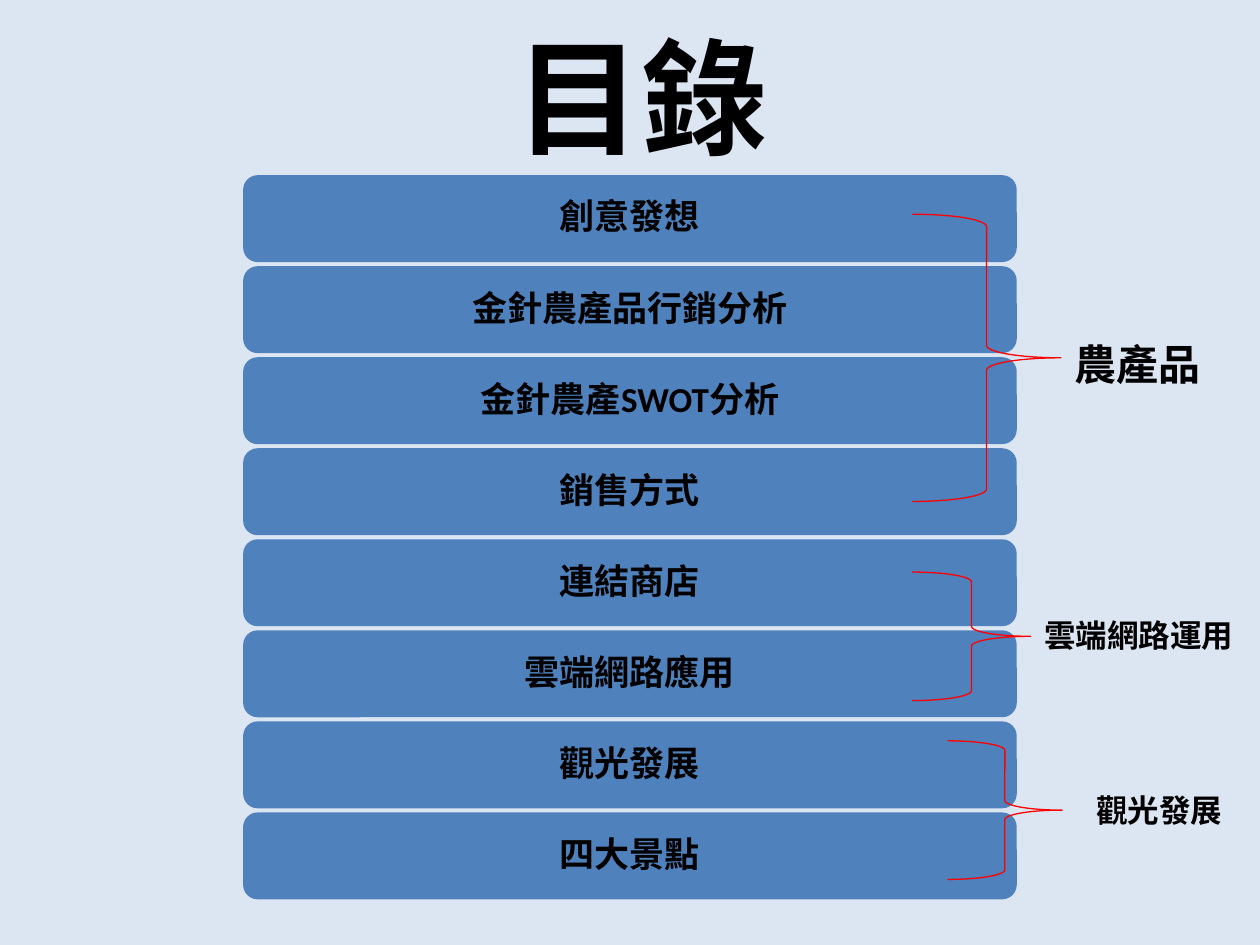
from pptx import Presentation
from pptx.dml.color import RGBColor as Rgb
from pptx.enum.shapes import MSO_SHAPE as Shape
from pptx.enum.text import MSO_ANCHOR as Anchor, PP_ALIGN as Align
from pptx.util import Inches, Pt

COLORS = {"back": "DCE6F2", "bar": "4F81BD", "brace": "FF0000", "text": "000000"}
WIDE, HIGH = 10, 7.5
LEFT, TOP, SPAN, TALL = 1.93, 1.39, 6.14, 0.69
STEP = 0.7225

TOPICS = ["創意發想", "金針農產品行銷分析", "金針農產SWOT分析", "銷售方式",
          "連結商店", "雲端網路應用", "觀光發展", "四大景點"]
GROUPS = [
    ((7.24, 1.7, 1.18, 2.28), "農產品", (8.43, 2.64, 1.21, 0.5), 24),
    ((7.24, 4.54, 0.94, 1.02), "雲端網路運用", (8.19, 4.84, 1.72, 0.4), 18),
    ((7.52, 5.88, 0.91, 1.1), "觀光發展", (8.6, 6.23, 1.21, 0.4), 18),
]


def color(name):
    return Rgb.from_string(COLORS[name])


def box(area):
    return [Inches(size) for size in area]


def write(shape, text, size, align=Align.LEFT, face="Calibri"):
    frame = shape.text_frame
    frame.text = text
    para = frame.paragraphs[0]
    para.alignment = align
    for run in para.runs:
        font = run.font
        font.name, font.size, font.bold = face, Pt(size), True
        font.color.rgb = color("text")
    return frame


def add_title(slide, text):
    shape = slide.shapes.add_textbox(*box((0.59, 0.13, 9, 1.25)))
    frame = write(shape, text, 72, Align.CENTER, "Noto Sans CJK SC")
    frame.word_wrap = True
    frame.vertical_anchor = Anchor.MIDDLE


def add_bar(slide, row, text):
    area = box((LEFT, TOP + row * STEP, SPAN, TALL))
    bar = slide.shapes.add_shape(Shape.ROUNDED_RECTANGLE, *area)
    bar.shadow.inherit = False
    bar.fill.solid()
    bar.fill.fore_color.rgb = color("bar")
    bar.line.fill.background()
    frame = write(bar, text, 20, Align.CENTER)
    frame.vertical_anchor = Anchor.MIDDLE
    frame.paragraphs[0].line_spacing = 0.9


def add_brace(slide, area):
    brace = slide.shapes.add_shape(Shape.RIGHT_BRACE, *box(area))
    brace.shadow.inherit = False
    brace.fill.background()
    brace.line.color.rgb = color("brace")
    brace.line.width = Pt(0.75)


def add_label(slide, text, area, size):
    label = slide.shapes.add_textbox(*box(area))
    write(label, text, size).word_wrap = False


def main():
    deck = Presentation()
    deck.slide_width, deck.slide_height = box((WIDE, HIGH))
    slide = deck.slides.add_slide(deck.slide_layouts[6])
    slide.background.fill.solid()
    slide.background.fill.fore_color.rgb = color("back")
    add_title(slide, "目錄")
    for row, topic in enumerate(TOPICS):
        add_bar(slide, row, topic)
    for brace, text, area, size in GROUPS:
        add_brace(slide, brace)
        add_label(slide, text, area, size)
    deck.save("out.pptx")


if __name__ == "__main__":
    main()
